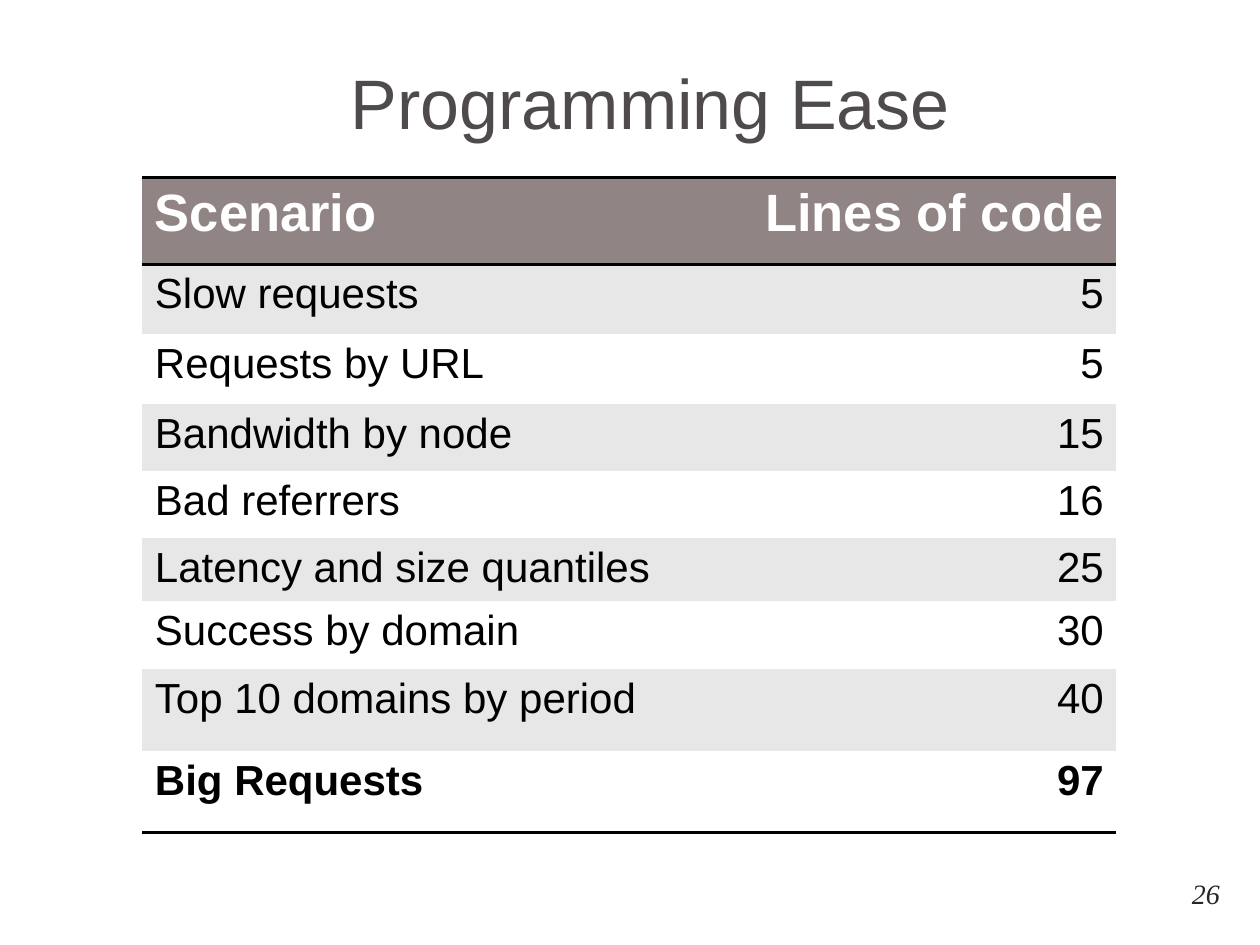
from lxml import etree
from pptx import Presentation
from pptx import util as u
from pptx.dml.color import RGBColor
from pptx.enum import text
from pptx.oxml.ns import qn

ROWS = [
    ("Scenario", "Lines of code"),
    ("Slow requests", "5"),
    ("Requests by URL", "5"),
    ("Bandwidth by node", "15"),
    ("Bad referrers", "16"),
    ("Latency and size quantiles", "25"),
    ("Success by domain", "30"),
    ("Top 10 domains by period", "40"),
    ("Big Requests", "97"),
]
COLUMN_WIDTHS = [4.48, 3.25]
ROW_HEIGHTS = [0.69, 0.55, 0.56, 0.53, 0.53, 0.49, 0.54, 0.65, 0.65]
LEFT, CENTER, RIGHT = text.PP_ALIGN.LEFT, text.PP_ALIGN.CENTER, text.PP_ALIGN.RIGHT


def color(hex_value):
    return RGBColor.from_string(hex_value)


def write(frame, words, size, hex_value, align, font="Arial", bold=False, italic=False):
    para = frame.paragraphs[0]
    para.alignment = align
    span = para.add_run()
    span.text = words
    span.font.name = font
    span.font.size = u.Pt(size)
    span.font.bold = bold
    span.font.italic = italic
    span.font.color.rgb = color(hex_value)


def add_label(page, box, anchor, bottom_inset, words, *style, **options):
    frame = page.shapes.add_textbox(*map(u.Inches, box)).text_frame
    frame.word_wrap = True
    frame.vertical_anchor = anchor
    frame.margin_bottom = u.Inches(bottom_inset)
    write(frame, words, *style, **options)


def set_borders(cell, ruled_sides):
    """Rule the named sides in black and clear the others."""
    properties = cell._tc.get_or_add_tcPr()
    for side in "LRTB":
        line = etree.SubElement(properties, qn(f"a:ln{side}"), w=str(u.Pt(2)))
        if side in ruled_sides:
            fill = etree.SubElement(line, qn("a:solidFill"))
            etree.SubElement(fill, qn("a:srgbClr"), val="000000")
        else:
            etree.SubElement(line, qn("a:noFill"))


def add_scenario_table(page, box):
    table = page.shapes.add_table(
        len(ROWS), len(COLUMN_WIDTHS), *map(u.Inches, box)
    ).table
    table.first_row = table.horz_banding = False
    for column, width in zip(table.columns, COLUMN_WIDTHS):
        column.width = u.Inches(width)
    last = len(ROWS) - 1
    for index, (values, height) in enumerate(zip(ROWS, ROW_HEIGHTS)):
        table.rows[index].height = u.Inches(height)
        header = index == 0
        band = "918485" if header else "E7E7E7" if index % 2 else "FFFFFF"
        ruled_sides = ("T" if index <= 1 else "") + ("B" if index in (0, last) else "")
        for column, (value, align) in enumerate(zip(values, (LEFT, RIGHT))):
            cell = table.cell(index, column)
            set_borders(cell, ruled_sides)
            cell.fill.solid()
            cell.fill.fore_color.rgb = color(band)
            write(cell.text_frame, value, 30 if header else 24,
                  "FFFFFF" if header else "000000", align,
                  bold=index in (0, last))


def main():
    deck = Presentation()
    deck.slide_width, deck.slide_height = u.Inches(10), u.Inches(7.5)
    page = deck.slides.add_slide(deck.slide_layouts[6])
    add_label(page, (0.49, -0.01, 9.34, 1.25), text.MSO_ANCHOR.BOTTOM, 0.1,
              "Programming Ease", 40, "4F4B4B", CENTER)
    add_label(page, (9.13, 6.89, 0.65, 0.4), text.MSO_ANCHOR.MIDDLE, 0.05,
              "26", 16, "262626", RIGHT, font="Times New Roman", italic=True)
    add_scenario_table(page, (1.13, 1.41, 7.73, 5.19))
    deck.save("out.pptx")


if __name__ == "__main__":
    main()
